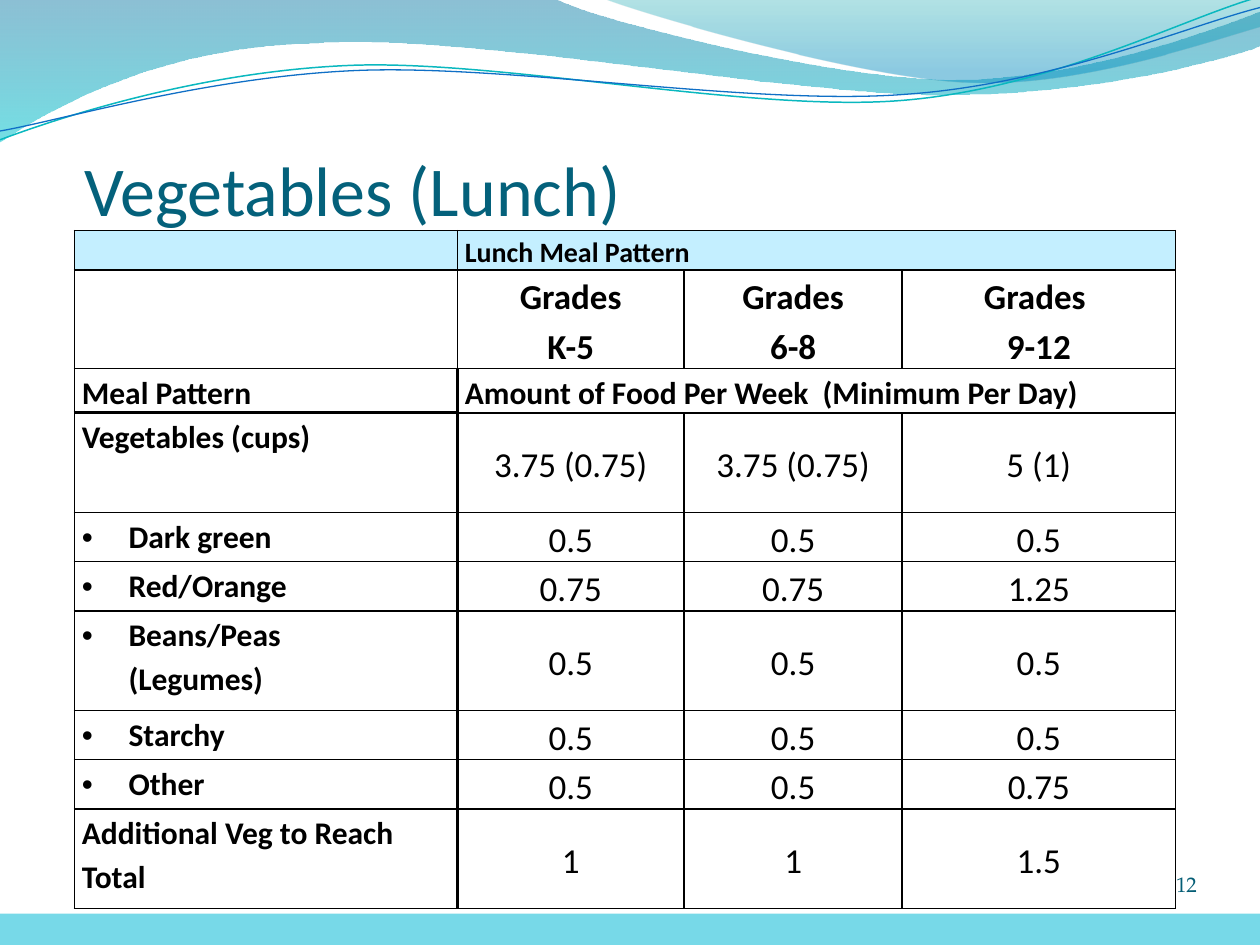
"""Build the lunch vegetable meal pattern slide."""
from dataclasses import dataclass

import pptx
import pptx.dml.color
import pptx.enum.shapes
import pptx.enum.text
import pptx.oxml
import pptx.oxml.ns
import pptx.util

Inches = pptx.util.Inches
Pt = pptx.util.Pt
ALIGN = pptx.enum.text.PP_ALIGN
ANCHOR = pptx.enum.text.MSO_ANCHOR
NAMESPACE = pptx.oxml.ns.nsdecls("a")
Point = tuple[float, float]


@dataclass(frozen=True)
class Theme:
    ink: str = "000000"
    paper: str = "FFFFFF"
    title: str = "04617B"
    number: str = "045D75"
    banner: str = "C4EFFF"
    footer: str = "77D9E8"
    body_font: str = "Calibri"
    number_font: str = "TeX Gyre Pagella"
    title_size: int = 40
    value_size: int = 20
    label_size: int = 18
    banner_size: int = 16
    number_size: int = 12
    thin: float = 1
    thick: float = 2.25


@dataclass(frozen=True)
class Stop:
    position: float
    color: str
    alpha: int


@dataclass(frozen=True)
class Wave:
    start: Point
    segments: tuple[tuple[Point, ...], ...]
    stops: tuple[Stop, ...] = ()
    line: str = ""
    width: float = 0


@dataclass(frozen=True)
class Food:
    label: str
    amounts: tuple[str, str, str]
    height: float = 0.39
    bulleted: bool = True


THEME = Theme()
WAVES = (
    Wave((0, 0), (
        ((4.4, -0.01),),
        ((4.76, 0.17), (6.64, 0.63), (7.58, 0.63)),
        ((8.53, 0.63), (9.58, 0.26), (10, 0.09)),
        ((10.01, 0.36),),
        ((9.83, 0.44), (8.7, 0.76), (7.46, 0.75)),
        ((6.22, 0.75), (3.82, 0.28), (2.57, 0.34)),
        ((1.29, 0.36), (0.46, 0.83), (-0.01, 1.13)),
        ((0, 0),),
    ), stops=(Stop(0, "0074A1", 45), Stop(1, "00C6CF", 55))),
    Wave((4.79, -0.01), (
        ((5.09, 0.11), (6.82, 0.62), (7.69, 0.65)),
        ((8.56, 0.69), (9.61, 0.32), (10, 0.21)),
        ((10, 0),),
        ((4.79, -0.01),),
    ), stops=(Stop(0, "00A1A9", 30), Stop(0.8, "008BBF", 45))),
    Wave((0, 1.11), (
        ((0.48, 0.93), (1.58, 0.57), (2.77, 0.52)),
        ((3.95, 0.47), (5.93, 0.89), (7.13, 0.8)),
        ((8.33, 0.71), (9.38, 0.15), (9.98, -0.02)),
    ), line="0AB8BF", width=0.85),
    Wave((0, 1.04), (
        ((0.47, 0.96), (1.64, 0.61), (2.83, 0.56)),
        ((4.03, 0.51), (5.97, 0.84), (7.17, 0.75)),
        ((8.36, 0.67), (9.41, 0.21), (10, 0.06)),
    ), line="0F6FC6", width=0.75),
)
GRADES = (("Grades", "K-5"), ("Grades", "6-8"), ("Grades ", "9-12"))
HEADER_HEIGHTS = (0.3, 0.75, 0.34)
COLUMN_WIDTHS = (3.04, 1.8, 1.73, 2.17)
FOODS = (
    Food("Vegetables (cups)", ("3.75 (0.75)", "3.75 (0.75)", "5 (1)"), 0.79, False),
    Food("Dark green", ("0.5", "0.5", "0.5")),
    Food("Red/Orange", ("0.75", "0.75", "1.25")),
    Food("Beans/Peas\n(Legumes)", ("0.5", "0.5", "0.5"), 0.79),
    Food("Starchy", ("0.5", "0.5", "0.5")),
    Food("Other", ("0.5", "0.5", "0.75")),
    Food("Additional Veg to Reach Total", ("1", "1", "1.5"), 0.79, False),
)


def rgb(color: str):
    return pptx.dml.color.RGBColor.from_string(color)


def bend(ribbon, segments: tuple[tuple[Point, ...], ...]) -> None:
    """Join each run of three straight steps into one cubic curve."""
    steps = iter(list(ribbon.element.iter(pptx.oxml.ns.qn("a:lnTo"))))
    for segment in segments:
        group = [next(steps) for _ in segment]
        if len(group) == 3:
            cubic = pptx.oxml.parse_xml(f"<a:cubicBezTo {NAMESPACE}/>")
            group[0].addprevious(cubic)
            for step in group:
                cubic.append(step[0])
                step.getparent().remove(step)


def draw_wave(slide, wave: Wave) -> None:
    start, *rest = [(round(x * 1000), round(y * 1000))
                    for x, y in (wave.start, *(p for s in wave.segments for p in s))]
    builder = slide.shapes.build_freeform(*start, scale=Inches(1) / 1000)
    builder.add_line_segments(rest, close=bool(wave.stops))
    ribbon = builder.convert_to_shape()
    bend(ribbon, wave.segments)
    ribbon.shadow.inherit = False
    if wave.stops:
        ribbon.line.fill.background()
        ribbon.fill.gradient()
        ribbon.fill.gradient_angle = 270
        for target, stop in zip(ribbon.fill.gradient_stops, wave.stops):
            target.color.rgb = rgb(stop.color)
            target.position = stop.position
        tones = ribbon.element.spPr.iter(pptx.oxml.ns.qn("a:srgbClr"))
        for tone, stop in zip(tones, wave.stops):
            tone.append(pptx.oxml.parse_xml(
                f'<a:alpha {NAMESPACE} val="{stop.alpha * 1000}"/>'))
    else:
        ribbon.fill.background()
        ribbon.line.color.rgb = rgb(wave.line)
        ribbon.line.width = Pt(wave.width)
    slide.shapes.title.element.addprevious(ribbon.element)


def write(paragraph, text: str, *, size: float, color: str = THEME.ink,
          font: str = THEME.body_font, bold: bool = False, align=ALIGN.LEFT,
          spacing: float = 1.15, bullet_indent: float = 0) -> None:
    for position, line in enumerate(text.split("\n")):
        if position:
            paragraph.add_line_break()
        run = paragraph.add_run()
        run.text = line
        run.font.name, run.font.size, run.font.bold = font, Pt(size), bold
        run.font.color.rgb = rgb(color)
    paragraph.alignment = align
    paragraph.line_spacing = spacing
    if bullet_indent:
        properties = paragraph._p.get_or_add_pPr()
        properties.set("marL", str(Inches(bullet_indent)))
        properties.set("indent", str(-Inches(bullet_indent)))
        for mark in ('buFont {} typeface="Arial"', 'buChar {} char="•"'):
            properties.append(pptx.oxml.parse_xml(f"<a:{mark.format(NAMESPACE)}/>"))


def format_cell(cell, row: int, column: int) -> None:
    cell.margin_left = cell.margin_right = Inches(0.06)
    cell.margin_top = cell.margin_bottom = 0
    label_body = column == 0 and row >= len(HEADER_HEIGHTS)
    cell.vertical_anchor = ANCHOR.TOP if label_body else ANCHOR.MIDDLE
    heavy = {
        "L": column == 1 and row >= 2,
        "R": column == 0 and row >= 2,
        "T": column == 0 and row == 3,
        "B": column == 0 and row == 2,
    }
    for side, is_heavy in heavy.items():
        width = Pt(THEME.thick if is_heavy else THEME.thin)
        cell._tc.get_or_add_tcPr().append(pptx.oxml.parse_xml(
            f'<a:ln{side} {NAMESPACE} w="{width}"><a:solidFill>'
            f'<a:srgbClr val="{THEME.ink}"/></a:solidFill></a:ln{side}>'))
    cell.fill.solid()
    cell.fill.fore_color.rgb = rgb(THEME.paper if row else THEME.banner)


def draw_table(slide) -> None:
    heights = (*HEADER_HEIGHTS, *(food.height for food in FOODS))
    pattern = slide.shapes.add_table(
        len(heights), len(COLUMN_WIDTHS), Inches(0.59), Inches(1.83),
        Inches(sum(COLUMN_WIDTHS)), Inches(sum(heights))).table
    pattern.first_row = pattern.horz_banding = False
    for column, width in zip(pattern.columns, COLUMN_WIDTHS):
        column.width = Inches(width)
    for row, height in enumerate(heights):
        pattern.rows[row].height = Inches(height)
        for column in range(len(COLUMN_WIDTHS)):
            format_cell(pattern.cell(row, column), row, column)

    def lines(row: int, column: int, *texts: str, **style) -> None:
        frame = pattern.cell(row, column).text_frame
        for position, text in enumerate(texts):
            write(frame.add_paragraph() if position else frame.paragraphs[0], text, **style)

    for row in (0, 2):
        pattern.cell(row, 1).merge(pattern.cell(row, 3))
    label = dict(size=THEME.label_size, bold=True)
    value = dict(size=THEME.value_size, align=ALIGN.CENTER)
    lines(0, 1, "Lunch Meal Pattern", size=THEME.banner_size, bold=True)
    lines(2, 0, "Meal Pattern", **label)
    lines(2, 1, "Amount of Food Per Week  (Minimum Per Day)", **label)
    for column, grade in enumerate(GRADES, 1):
        lines(1, column, *grade, bold=True, **value)
    for row, food in enumerate(FOODS, len(HEADER_HEIGHTS)):
        lines(row, 0, food.label, bullet_indent=0.37 * food.bulleted, **label)
        for column, amount in enumerate(food.amounts, 1):
            lines(row, column, amount, **value)


def main() -> None:
    deck = pptx.Presentation()
    deck.slide_width, deck.slide_height = Inches(10), Inches(7.5)
    slide = deck.slides.add_slide(deck.slide_layouts[5])
    for wave in WAVES:
        draw_wave(slide, wave)

    title = slide.shapes.title
    title.left, title.top, title.width, title.height = map(Inches, (0.67, 0.85, 9, 0.98))
    heading = title.text_frame
    heading.margin_left = heading.margin_right = heading.margin_bottom = 0
    heading.vertical_anchor = ANCHOR.BOTTOM
    write(heading.paragraphs[0], "Vegetables (Lunch)", size=THEME.title_size,
          color=THEME.title, spacing=1.0)

    draw_table(slide)

    footer = slide.shapes.add_shape(pptx.enum.shapes.MSO_SHAPE.RECTANGLE,
                                    *map(Inches, (0, 7.25, 10, 0.25)))
    footer.shadow.inherit = False
    footer.fill.solid()
    footer.fill.fore_color.rgb = rgb(THEME.footer)
    footer.line.fill.background()

    number = slide.shapes.add_textbox(*map(Inches, (8.67, 6.92, 0.83, 0.42))).text_frame
    number.word_wrap = True
    number.margin_left = number.margin_right = number.margin_top = number.margin_bottom = 0
    write(number.paragraphs[0], "12", size=THEME.number_size, color=THEME.number,
          font=THEME.number_font, align=ALIGN.RIGHT, spacing=1.0)
    deck.save("out.pptx")


if __name__ == "__main__":
    main()
